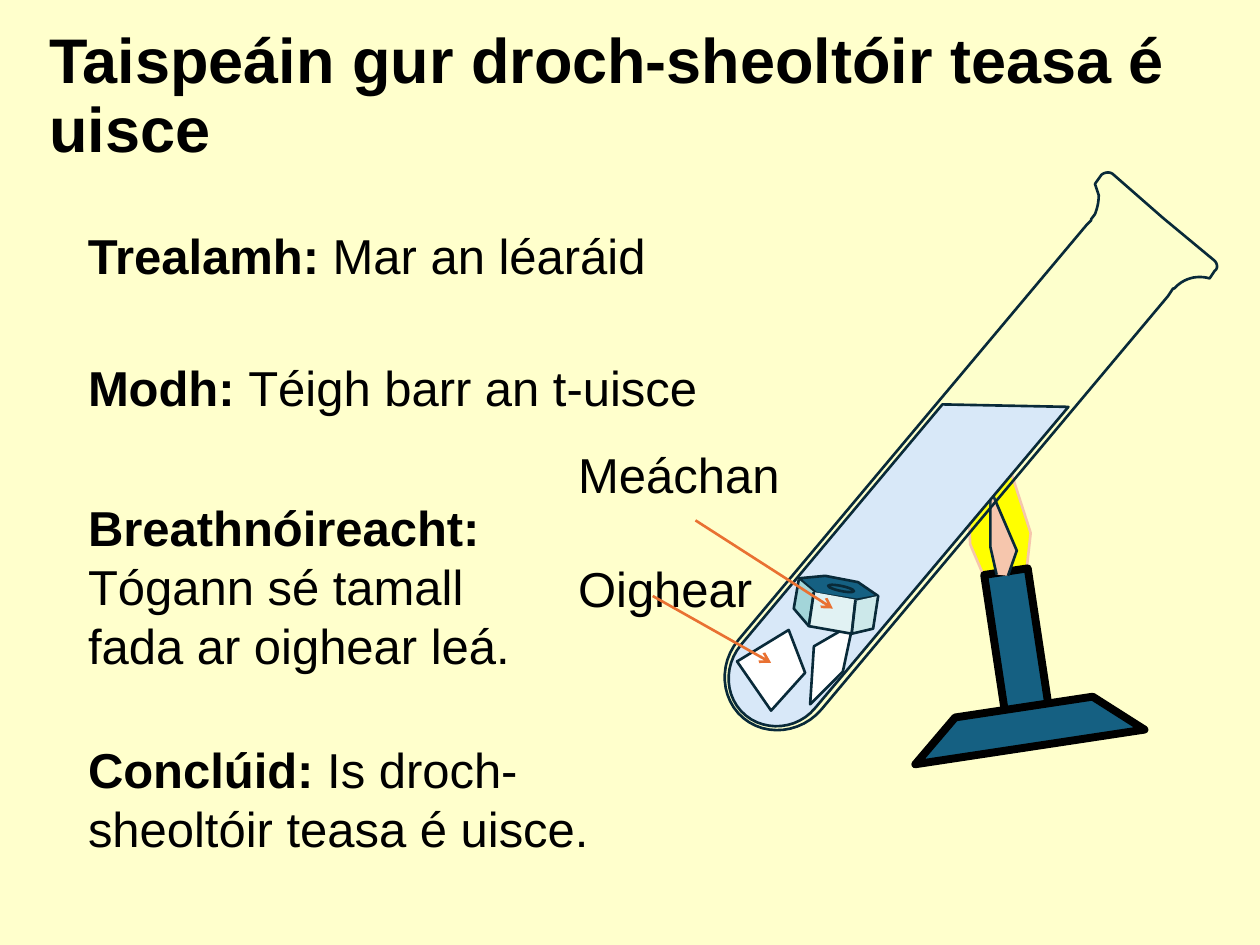
from dataclasses import dataclass
from typing import NamedTuple, Optional

from lxml import etree
from pptx import Presentation
from pptx.dml.color import RGBColor
from pptx.enum.shapes import MSO_CONNECTOR, MSO_SHAPE
from pptx.enum.text import MSO_ANCHOR, MSO_AUTO_SIZE, PP_ALIGN
from pptx.oxml.ns import qn
from pptx.util import Inches, Pt

RECT = MSO_SHAPE.RECTANGLE
BASE = MSO_SHAPE.FLOWCHART_MANUAL_OPERATION
OVAL = MSO_SHAPE.OVAL
STRAIGHT = MSO_CONNECTOR.STRAIGHT

CREAM = RGBColor(0xFF, 0xFF, 0xCC)
BLACK = RGBColor(0, 0, 0)
WHITE = RGBColor(0xFF, 0xFF, 0xFF)
YELLOW = RGBColor(0xFF, 0xFF, 0)
PEACH = RGBColor(0xF6, 0xC6, 0xAD)
TEAL = RGBColor(0x15, 0x60, 0x82)
INK = RGBColor(0x09, 0x2A, 0x39)
GLASS = RGBColor(0xED, 0xFF, 0xCD)
WATER = RGBColor(0xD8, 0xE8, 0xF8)
SHADE = RGBColor(0xA3, 0xD5, 0xD9)
PALE = RGBColor(0xE1, 0xF2, 0xF3)
MID = RGBColor(0xCC, 0xE8, 0xEA)
ORANGE = RGBColor(0xE9, 0x71, 0x32)
FONT = "Arial"
STEPS = 12


class Curve(NamedTuple):
    """A cubic curve: two control points and an end point."""
    first: tuple
    second: tuple
    end: tuple


@dataclass
class Outline:
    points: list
    fill: RGBColor
    line: RGBColor = INK
    closed: bool = True
    alpha: Optional[int] = None


@dataclass
class Part:
    kind: int
    box: tuple
    turn: float
    line: RGBColor
    width: float


@dataclass
class Note:
    box: tuple
    lines: list  # one (bold, plain) pair for each paragraph
    wrap: bool = True


class Arrow(NamedTuple):
    start: tuple
    end: tuple


FLAME = [
    Outline([(7.82, 4.6), (7.7, 4.32), (7.67, 3.66), (7.98, 3.61),
             (8.18, 4.23), (8.14, 4.59)], YELLOW, PEACH),
]
CORE = [
    Outline([(7.91, 4.56), (7.86, 4.34), (7.86, 3.88), (8.07, 4.37),
             (8, 4.57)], PEACH, closed=False),
]
TUBE = [
    Outline([(8.83, 1.38), (9.23, 1.73), (9.64, 2.07),
             Curve((9.66, 2.09), (9.67, 2.13), (9.64, 2.15)), (9.6, 2.21),
             Curve((9.5, 2.18), (9.39, 2.21), (9.32, 2.29)), (9.31, 2.29),
             (9.27, 2.35), (6.52, 5.63),
             Curve((6.36, 5.82), (6.08, 5.85), (5.9, 5.7)),
             Curve((5.72, 5.55), (5.7, 5.27), (5.86, 5.08)),
             (8.62, 1.79), (8.66, 1.75), (8.66, 1.74), (8.69, 1.7),
             Curve((8.71, 1.65), (8.72, 1.6), (8.72, 1.55)),
             (8.69, 1.46), (8.74, 1.39),
             Curve((8.76, 1.37), (8.8, 1.36), (8.83, 1.38))],
            GLASS, alpha=10),
    Outline([(8.48, 3.23), (6.47, 5.62),
             Curve((6.33, 5.79), (6.08, 5.81), (5.92, 5.68)),
             Curve((5.75, 5.54), (5.74, 5.29), (5.88, 5.12)),
             (7.48, 3.21)], WATER),
]
ICE = [
    Outline([(5.85, 5.25), (6.26, 5), (6.39, 5.34), (6.12, 5.64)], WHITE),
    Outline([(6.46, 5.13), (6.77, 4.95), (6.69, 5.33), (6.43, 5.59)], WHITE),
]
NUT_TOP = [
    Outline([(6.34, 4.59), (6.48, 4.71), (6.8, 4.76), (6.97, 4.73),
             (6.81, 4.62), (6.55, 4.57)], TEAL),
]
NUT_SIDES = [
    Outline([(6.34, 4.6), (6.3, 4.83), (6.42, 4.97), (6.46, 4.7)],
            SHADE, closed=False),
    Outline([(6.46, 4.7), (6.42, 4.97), (6.76, 5.03), (6.79, 4.76)],
            PALE, closed=False),
    Outline([(6.79, 4.77), (6.76, 5.03), (6.93, 4.99), (6.97, 4.73)],
            MID, closed=False),
]
STEM = Part(RECT, (7.9, 4.53, 0.35, 1.21), 351.4, BLACK, 4.5)
FOOT = Part(BASE, (7.23, 5.61, 1.84, 0.32), 171.4, BLACK, 4.5)
HOLE = Part(OVAL, (6.57, 4.65, 0.21, 0.04), 11.8, INK, 1.5)
DRAWING = [*FLAME, STEM, *CORE, FOOT, *TUBE, *ICE, *NUT_TOP, HOLE, *NUT_SIDES]

NOTES = [
    Note((4.49, 4.38, 1.6, 0.57), [("", "Oighear")], wrap=False),
    Note((4.49, 3.48, 1.82, 0.57), [("", "Meáchan")], wrap=False),
    Note((0.6, 1.74, 5.24, 0.57), [("Trealamh: ", "Mar an léaráid")]),
    Note((0.6, 2.79, 5.51, 0.57), [("Modh: ", "Téigh barr an t-uisce")]),
    Note((0.6, 3.9, 3.59, 1.51),
         [("Breathnóireacht:", ""),
          ("", "Tógann sé tamall fada ar oighear leá.")]),
    Note((0.6, 5.82, 4.41, 1.04),
         [("Conclúid: ", "Is droch-sheoltóir teasa é uisce.")]),
]
ARROWS = [Arrow((5.18, 4.73), (6.12, 5.26)), Arrow((5.52, 4.13), (6.61, 4.83))]


def trace(points: list) -> list:
    """Turn corners and curves into plain points in EMU."""
    out = [points[0]]
    for item in points[1:]:
        if not isinstance(item, Curve):
            out.append(item)
            continue
        start = out[-1]
        for step in range(1, STEPS + 1):
            t = step / STEPS
            u = 1 - t
            out.append(tuple(
                u**3 * a + 3 * u * u * t * b + 3 * u * t * t * c + t**3 * d
                for a, b, c, d in zip(start, *item)))
    return [(Inches(x), Inches(y)) for x, y in out]


def paint(shape, fill: RGBColor, line: RGBColor, width: float) -> None:
    shape.shadow.inherit = False
    shape.fill.solid()
    shape.fill.fore_color.rgb = fill
    shape.line.color.rgb = line
    shape.line.width = Pt(width)


def draw_outline(shapes, item: Outline) -> None:
    first, *rest = trace(item.points)
    pen = shapes.build_freeform(*first)
    pen.add_line_segments(rest, close=item.closed)
    shape = pen.convert_to_shape()
    paint(shape, item.fill, item.line, 1.5)
    if item.alpha is not None:
        tint = shape._element.spPr.find(qn("a:solidFill"))[0]
        etree.SubElement(tint, qn("a:alpha"), val=str(item.alpha * 1000))


def draw_part(shapes, part: Part) -> None:
    shape = shapes.add_shape(part.kind, *map(Inches, part.box))
    shape.rotation = part.turn
    paint(shape, TEAL, part.line, part.width)


def draw_note(shapes, note: Note) -> None:
    frame = shapes.add_textbox(*map(Inches, note.box)).text_frame
    frame.word_wrap = note.wrap
    for i, pair in enumerate(note.lines):
        para = frame.add_paragraph() if i else frame.paragraphs[0]
        para.font.name, para.font.size = FONT, Pt(28)
        para.font.color.rgb = BLACK
        for text, bold in zip(pair, (True, False)):
            if text:
                run = para.add_run()
                run.text, run.font.bold = text, bold


def draw_arrow(shapes, arrow: Arrow) -> None:
    link = shapes.add_connector(STRAIGHT, *map(Inches, arrow.start + arrow.end))
    link.line.color.rgb = ORANGE
    link.line.width = Pt(1.5)
    props = link._element.spPr
    etree.SubElement(props.find(qn("a:ln")), qn("a:tailEnd"), type="arrow")
    etree.SubElement(props, qn("a:effectLst"))


def set_title(title) -> None:
    title.left, title.top, title.width, title.height = map(
        Inches, (0.29, 0.18, 9.49, 1.19))
    frame = title.text_frame
    frame.text = "Taispeáin gur droch-sheoltóir teasa é uisce"
    frame.auto_size = MSO_AUTO_SIZE.NONE
    frame.vertical_anchor = MSO_ANCHOR.MIDDLE
    para = frame.paragraphs[0]
    para.alignment = PP_ALIGN.LEFT
    para.line_spacing = 0.9
    para.font.name, para.font.size, para.font.bold = FONT, Pt(36), True
    para.font.color.rgb = BLACK


def main() -> None:
    deck = Presentation()
    deck.slide_width, deck.slide_height = Inches(10), Inches(7.5)
    slide = deck.slides.add_slide(deck.slide_layouts[5])
    slide.background.fill.solid()
    slide.background.fill.fore_color.rgb = CREAM
    set_title(slide.shapes.title)
    for item in DRAWING:
        draw = draw_outline if isinstance(item, Outline) else draw_part
        draw(slide.shapes, item)
    for note in NOTES:
        draw_note(slide.shapes, note)
    for arrow in ARROWS:
        draw_arrow(slide.shapes, arrow)
    deck.save("out.pptx")


if __name__ == "__main__":
    main()
